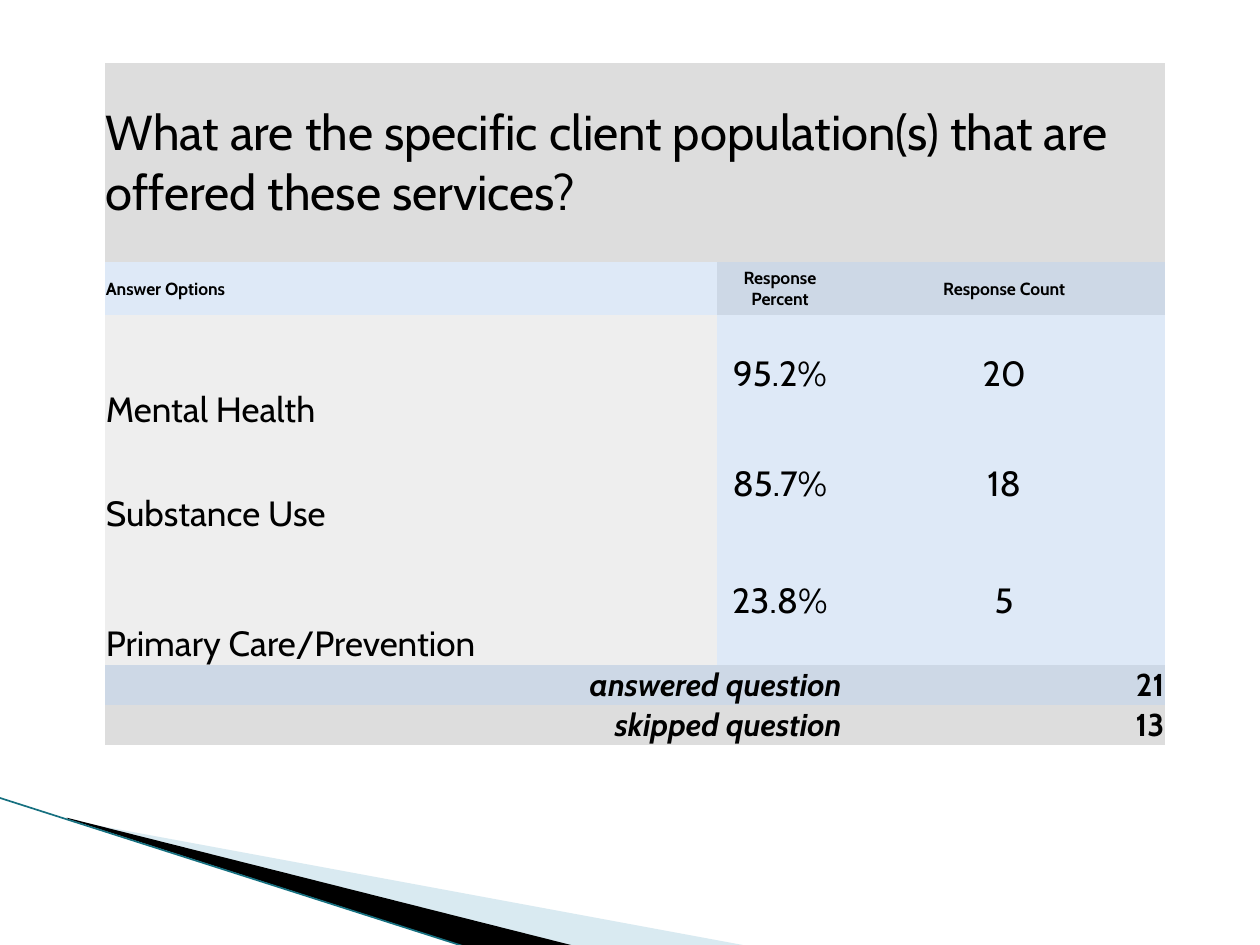
from dataclasses import dataclass

from lxml.etree import SubElement
from pptx import Presentation
from pptx.dml.color import RGBColor
from pptx.enum.shapes import MSO_CONNECTOR as Connector
from pptx.enum.text import MSO_ANCHOR as Anchor, PP_ALIGN as Align
from pptx.oxml.ns import qn
from pptx.util import Inches, Pt


@dataclass(frozen=True)
class Theme:
    font: str = "Cabin"
    text: str = "000000"
    gray: str = "DDDDDD"
    light_gray: str = "EEEEEE"
    blue: str = "CDD8E6"
    light_blue: str = "DEE9F7"
    wedge: str = "A0CBDC"
    edge: str = "167080"
    question_size: int = 28
    header_size: int = 10
    answer_size: int = 20
    total_size: int = 18


THEME = Theme()
SLIDE_WIDTH, SLIDE_HEIGHT = 10, 7.5
TABLE_LEFT, TABLE_TOP = 0.83, 0.5
COLUMNS = [4.86, 1, 2.56]
ROWS = [1.58, 0.42, 0.92, 0.83, 1.03, 0.18, 0.18]
NO_GRID_STYLE = "{2D5ABB26-0587-4C30-8999-92F81FD0307C}"

QUESTION = "What are the specific client population(s) that are offered these services?"
HEADERS = ["Answer Options", "Response Percent", "Response Count"]
ANSWERS = [
    ("Mental Health", "95.2%", "20"),
    ("Substance Use", "85.7%", "18"),
    ("Primary Care/Prevention", "23.8%", "5"),
]
TOTALS = [
    ("answered question", "21", THEME.blue),
    ("skipped question", "13", THEME.gray),
]


def paint(target, color):
    target.fill.solid()
    target.fill.fore_color.rgb = RGBColor.from_string(color)


def write(cell, text, *, size, fill, align=Align.LEFT, anchor=Anchor.MIDDLE,
          bold=False, italic=False):
    """Fill one table cell with formatted text."""
    paint(cell, fill)
    cell.margin_left = cell.margin_right = cell.margin_top = Inches(0.01)
    cell.margin_bottom = 0
    cell.vertical_anchor = anchor
    para = cell.text_frame.paragraphs[0]
    para.alignment = align
    span = para.add_run()
    span.text = text
    font = span.font
    font.name, font.size = THEME.font, Pt(size)
    font.bold, font.italic = bold, italic
    font.color.rgb = RGBColor.from_string(THEME.text)


def add_wedge(page, points, color, opacity=100):
    """Draw a closed, unlined polygon from points in inches."""
    start, *others = [(Inches(x), Inches(y)) for x, y in points]
    builder = page.shapes.build_freeform(*start)
    builder.add_line_segments(others, close=True)
    wedge = builder.convert_to_shape()
    wedge.shadow.inherit = False
    wedge.line.fill.background()
    paint(wedge, color)
    if opacity < 100:
        tint = wedge.fill._xPr.find(qn("a:solidFill"))[0]
        SubElement(tint, qn("a:alpha")).set("val", str(opacity * 1000))


def add_edge(page, start, end):
    edge = page.shapes.add_connector(
        Connector.STRAIGHT, *(Inches(value) for value in start + end))
    edge.line.color.rgb = RGBColor.from_string(THEME.edge)
    edge.line.width = Pt(0.95)
    SubElement(edge._element.spPr, qn("a:effectLst"))


def add_corner(page):
    """Draw the sweeping wedges at the bottom left."""
    add_wedge(page, [(0.55, 6.51), (5.95, 7.51), (4.56, 7.51), (0.55, 6.5)],
              THEME.wedge, 40)
    add_wedge(page, [(0.53, 6.49), (4.57, 7.51), (3.72, 7.52), (0.54, 6.5)],
              THEME.text)
    add_edge(page, (-0.01, 6.33), (3.71, 7.52))


def add_survey_table(page):
    frame = page.shapes.add_table(
        len(ROWS), len(COLUMNS), Inches(TABLE_LEFT), Inches(TABLE_TOP),
        Inches(sum(COLUMNS)), Inches(sum(ROWS)))
    table = frame.table
    table.first_row = table.horz_banding = False
    table._tbl.tblPr.find(qn("a:tableStyleId")).text = NO_GRID_STYLE
    for column, width in zip(table.columns, COLUMNS):
        column.width = Inches(width)
    for row, height in zip(table.rows, ROWS):
        row.height = Inches(height)

    # Question across the whole width
    table.cell(0, 0).merge(table.cell(0, 2))
    write(table.cell(0, 0), QUESTION, size=THEME.question_size, fill=THEME.gray)

    # Column headers
    for column, text in enumerate(HEADERS):
        write(table.cell(1, column), text, size=THEME.header_size, bold=True,
              fill=THEME.blue if column else THEME.light_blue,
              align=Align.CENTER if column else Align.LEFT)

    # Answers with percent and count
    for row, (label, *values) in enumerate(ANSWERS, start=2):
        write(table.cell(row, 0), label, size=THEME.answer_size,
              fill=THEME.light_gray, anchor=Anchor.BOTTOM)
        for column, value in enumerate(values, start=1):
            write(table.cell(row, column), value, size=THEME.answer_size,
                  fill=THEME.light_blue, align=Align.CENTER)

    # Totals
    for row, (label, count, fill) in enumerate(TOTALS, start=2 + len(ANSWERS)):
        table.cell(row, 0).merge(table.cell(row, 1))
        for column, text in ((0, label), (2, count)):
            write(table.cell(row, column), text, size=THEME.total_size, fill=fill,
                  align=Align.RIGHT, anchor=Anchor.BOTTOM, bold=True,
                  italic=column == 0)


def main():
    deck = Presentation()
    deck.slide_width, deck.slide_height = Inches(SLIDE_WIDTH), Inches(SLIDE_HEIGHT)
    page = deck.slides.add_slide(deck.slide_layouts[6])
    add_corner(page)
    add_survey_table(page)
    deck.save("out.pptx")


if __name__ == "__main__":
    main()
